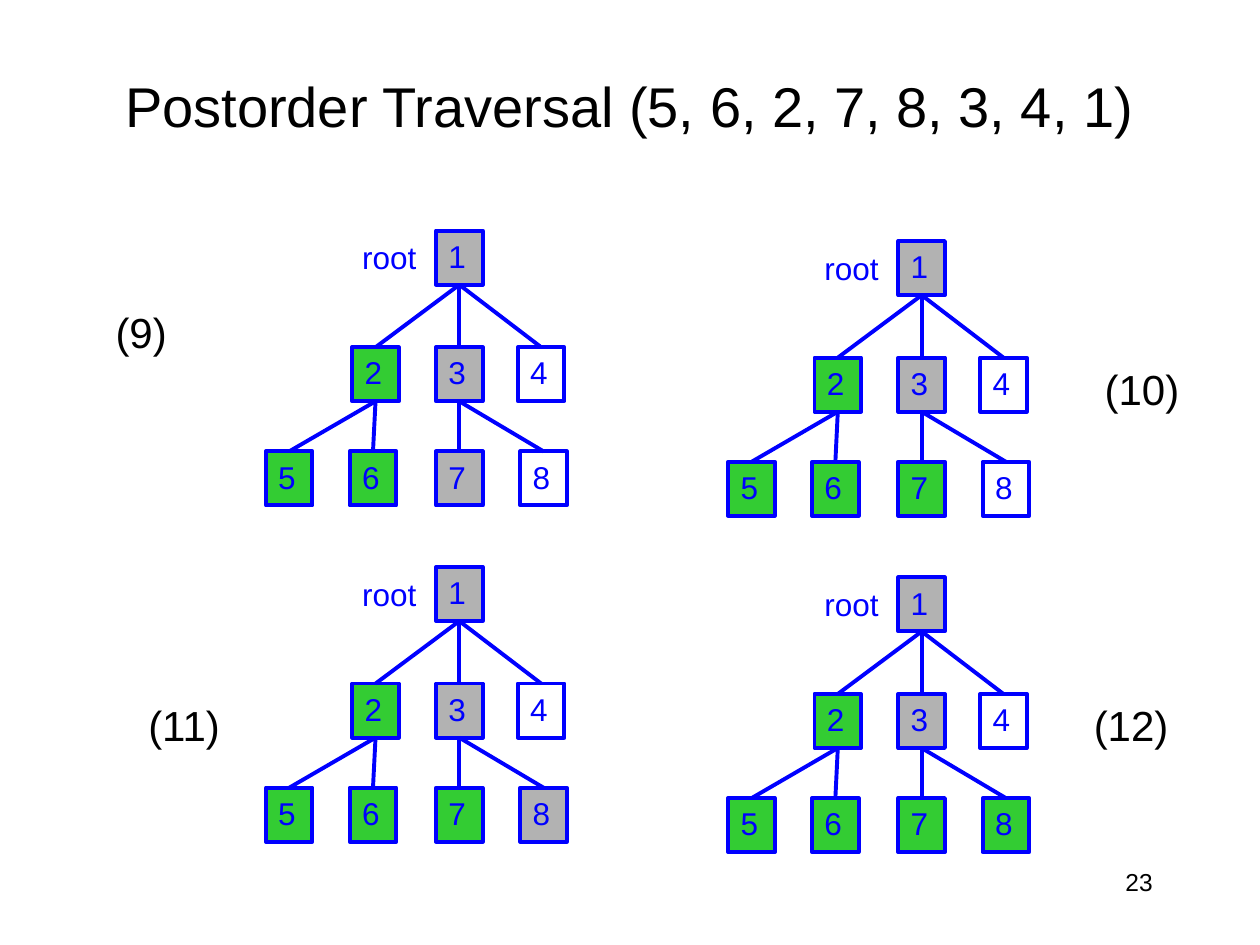
from lxml import etree
from pptx import Presentation
from pptx.dml.color import RGBColor
from pptx.enum.shapes import MSO_CONNECTOR, MSO_SHAPE
from pptx.enum.text import MSO_ANCHOR, MSO_AUTO_SIZE, PP_ALIGN
from pptx.oxml.ns import qn
from pptx.util import Cm, Pt

RECT = MSO_SHAPE.RECTANGLE
LINE = MSO_CONNECTOR.STRAIGHT
LEFT, MID, RIGHT = PP_ALIGN.LEFT, PP_ALIGN.CENTER, PP_ALIGN.RIGHT
TOP, CENTRE = MSO_ANCHOR.TOP, MSO_ANCHOR.MIDDLE
GROW, FIXED = MSO_AUTO_SIZE.SHAPE_TO_FIT_TEXT, MSO_AUTO_SIZE.NONE
BELOW, ABOVE = 2, 0

BLACK, BLUE, GREEN, GREY = "000000", "0000FF", "33CC33", "B2B2B2"

# Node offsets from the root node, in cm
SPOTS = {
    1: (0, 0),
    2: (-1.69, 2.35), 3: (0, 2.35), 4: (1.65, 2.35),
    5: (-3.43, 4.45), 6: (-1.74, 4.45), 7: (0, 4.45), 8: (1.7, 4.45),
}
KIDS = {1: (3, 2, 4), 2: (5, 6), 3: (7, 8)}
ENTER = (1, 2, 5, 6, 3, 7, 8, 4)
LEAVE = (5, 6, 2, 7, 8, 3, 4, 1)

# Step, nodes entered, nodes left, label position and width
STEPS = [
    (9, 6, 3, 2.08, 6.05, 1.55),
    (10, 6, 4, 22.02, 7.2, 2.03),
    (11, 7, 4, 2.74, 13.97, 2.03),
    (12, 7, 5, 21.8, 13.97, 2.03),
]


def tint(code):
    return RGBColor.from_string(code)


class Board:
    font = "Arial"
    pen = Pt(2.25)

    def __init__(self, slide):
        self.slide = slide
        self.shapes = slide.shapes

    def label(self, shape, text, size, ink, align=LEFT, anchor=TOP, wrap=False):
        frame = shape.text_frame
        frame.text = text
        frame.word_wrap = wrap
        frame.auto_size = FIXED if wrap else GROW
        frame.vertical_anchor = anchor
        par = frame.paragraphs[0]
        par.alignment = align
        font = par.runs[0].font
        font.name, font.size = self.font, Pt(size)
        font.color.rgb = tint(ink)

    def text(self, x, y, w, h, text, size, ink=BLACK, **style):
        box = self.shapes.add_textbox(Cm(x), Cm(y), Cm(w), Cm(h))
        self.label(box, text, size, ink, **style)

    def node(self, x, y, text, fill):
        box = self.shapes.add_shape(RECT, Cm(x), Cm(y), Cm(0.94), Cm(1.09))
        box.shadow.inherit = False
        if fill:
            box.fill.solid()
            box.fill.fore_color.rgb = tint(fill)
        else:
            box.fill.background()
        box.line.color.rgb = tint(BLUE)
        box.line.width = self.pen
        self.label(box, text, 18, BLUE)
        return box

    def edge(self, top, low):
        line = self.shapes.add_connector(LINE, 0, 0, 0, 0)
        line.begin_connect(top, BELOW)
        line.end_connect(low, ABOVE)
        line.line.color.rgb = tint(BLUE)
        line.line.width = self.pen
        etree.SubElement(line._element.spPr, qn("a:effectLst"))

    def tree(self, x, y, seen, done):
        nodes = {}
        for key, (dx, dy) in SPOTS.items():
            fill = None
            if key in LEAVE[:done]:
                fill = GREEN
            elif key in ENTER[:seen]:
                fill = GREY
            nodes[key] = self.node(x + dx, y + dy, str(key), fill)
        for top, kids in KIDS.items():
            for kid in kids:
                self.edge(nodes[top], nodes[kid])
        self.text(x - 1.74, y + 0.03, 1.6, 1.02, "root", 18, BLUE)


def main():
    deck = Presentation()
    deck.slide_width, deck.slide_height = Cm(25.4), Cm(19.05)
    board = Board(deck.slides.add_slide(deck.slide_layouts[6]))

    # Title and page number
    order = ", ".join(str(key) for key in LEAVE)
    board.text(1.9, 1.06, 21.6, 2.12, f"Postorder Traversal ({order})", 32,
               align=MID, anchor=CENTRE, wrap=True)
    board.text(18.2, 17.36, 5.29, 1.27, "23", 14, align=RIGHT, wrap=True)

    # Trees in two columns, the right one slightly lower
    for i, (step, seen, done, x, y, w) in enumerate(STEPS):
        row, col = divmod(i, 2)
        board.tree(8.79 + 9.32 * col, 4.65 + 6.78 * row + 0.21 * col, seen, done)
        board.text(x, y, w, 1.27, f"({step})", 24)

    deck.save("out.pptx")


if __name__ == "__main__":
    main()
